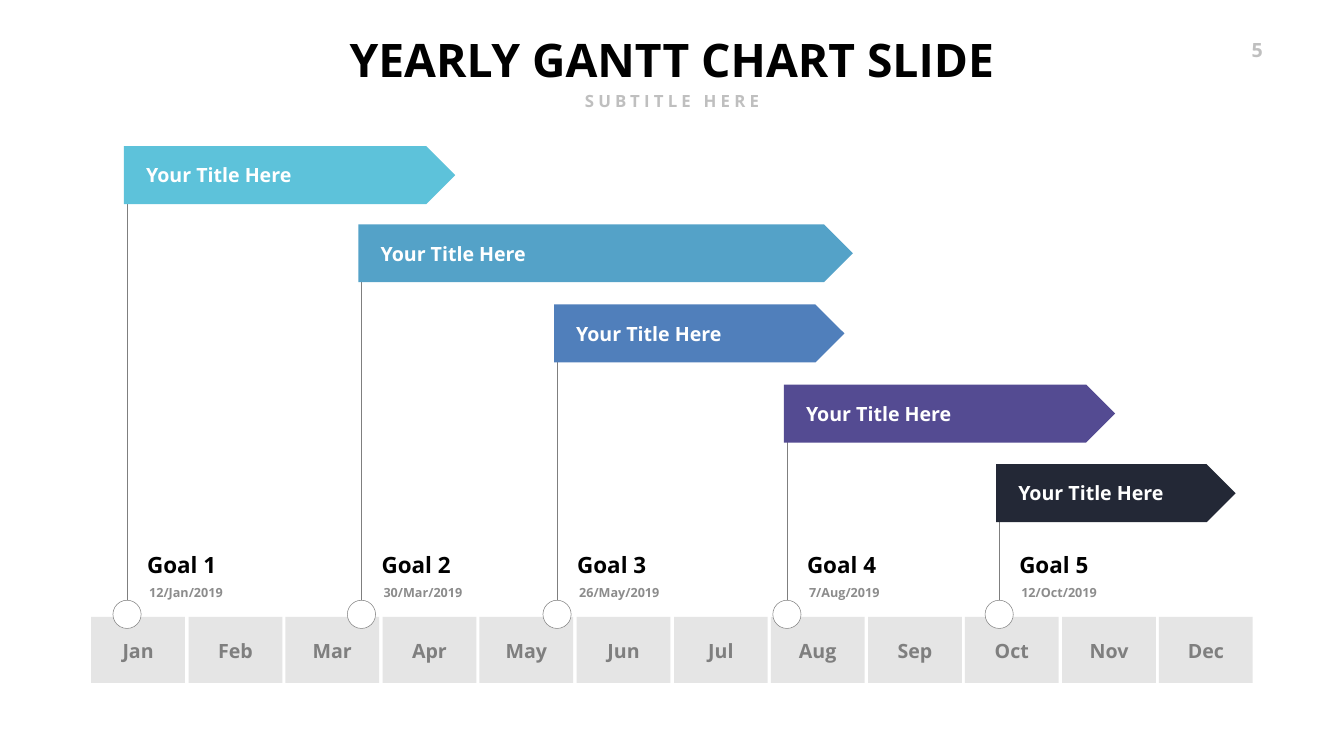
from lxml import etree
from pptx import Presentation
from pptx.dml.color import RGBColor
from pptx.enum.shapes import MSO_CONNECTOR, MSO_SHAPE
from pptx.enum.text import MSO_ANCHOR, PP_ALIGN
from pptx.oxml.ns import qn
from pptx.util import Pt

PX = 9144
FONT = "Open Sans"
RECT, OVAL, ARROW = MSO_SHAPE.RECTANGLE, MSO_SHAPE.OVAL, MSO_SHAPE.PENTAGON
STRAIGHT = MSO_CONNECTOR.STRAIGHT
LEFT, CENTER, RIGHT = PP_ALIGN.LEFT, PP_ALIGN.CENTER, PP_ALIGN.RIGHT
TOP, MIDDLE, BOTTOM = MSO_ANCHOR.TOP, MSO_ANCHOR.MIDDLE, MSO_ANCHOR.BOTTOM

BLACK = RGBColor(0x00, 0x00, 0x00)
WHITE = RGBColor(0xFF, 0xFF, 0xFF)
GRAY = RGBColor(0x7F, 0x7F, 0x7F)
DATE_GRAY = RGBColor(0x8C, 0x8C, 0x8C)
LIGHT_GRAY = RGBColor(0xBF, 0xBF, 0xBF)
SKY = RGBColor(0x5D, 0xC2, 0xDA)
AZURE = RGBColor(0x54, 0xA2, 0xC8)
BLUE = RGBColor(0x50, 0x7F, 0xBB)
PURPLE = RGBColor(0x54, 0x4B, 0x92)
NAVY = RGBColor(0x23, 0x28, 0x36)

MONTHS = ["Jan", "Feb", "Mar", "Apr", "May", "Jun",
          "Jul", "Aug", "Sep", "Oct", "Nov", "Dec"]
GOALS = [
    ("Goal 1", "12/Jan/2019", (246, 290, 657, 115), SKY),
    ("Goal 2", "30/Mar/2019", (711, 445, 981, 115), AZURE),
    ("Goal 3", "26/May/2019", (1099, 604, 576, 115), BLUE),
    ("Goal 4", "7/Aug/2019", (1555, 763, 657, 115), PURPLE),
    ("Goal 5", "12/Oct/2019", (1976, 921, 475, 115), NAVY),
]


def emu(*lengths):
    return [n * PX for n in lengths]


def add_text(s, box, text, size, color, align=LEFT, anchor=TOP, spacing=0):
    tf = s.shapes.add_textbox(*emu(*box)).text_frame
    tf.word_wrap = True
    tf.vertical_anchor = anchor
    p = tf.paragraphs[0]
    p.text = text
    p.alignment = align
    r = p.runs[0]
    r.font.name, r.font.size, r.font.bold = FONT, Pt(size), True
    r.font.color.rgb = color
    if spacing:
        r.font._element.set("spc", str(spacing * 100))


def add_box(s, kind, box, fill, line=None, alpha=None):
    sp = s.shapes.add_shape(kind, *emu(*box))
    sp.shadow.inherit = False
    sp.fill.solid()
    sp.fill.fore_color.rgb = fill
    if alpha:
        color = sp._element.spPr.find(qn("a:solidFill"))[0]
        etree.SubElement(color, qn("a:alpha")).set("val", str(alpha * 1000))
    if line:
        sp.line.color.rgb = line
        sp.line.width = Pt(0.75)
    else:
        sp.line.fill.background()


def add_header(s, box):
    x, y, w, h = box
    add_text(s, (x, y, w, 121), "YEARLY GANTT CHART SLIDE", 66, BLACK, CENTER)
    add_text(s, (x, y + 118, w, 50), "SUBTITLE HERE", 24, LIGHT_GRAY, CENTER, spacing=6)


def add_page_number(s, box):
    add_text(s, box, "5", 28, LIGHT_GRAY, RIGHT, spacing=3)


def add_month_axis(s, box):
    x, y, w, h = box
    gap = 7
    pitch = (w + gap) / len(MONTHS)
    cell_w = round(pitch) - gap
    for i, month in enumerate(MONTHS):
        left = x + round(i * pitch)
        add_box(s, RECT, (left, y, cell_w, h), GRAY, alpha=20)
        add_text(s, (left, y + 38, cell_w, 57), month, 28, GRAY, CENTER, BOTTOM)


def add_goal(s, box, axis_top, goal, date, color):
    x, y, w, h = box
    stem, label, dot = x + 6, x + 36, 56
    dot_top = axis_top - 33
    line = s.shapes.add_connector(STRAIGHT, *emu(stem, y + h // 2, stem, dot_top))
    line.line.color.rgb = GRAY
    line.line.width = Pt(0.75)
    etree.SubElement(line._element.spPr, qn("a:effectLst"))
    add_box(s, OVAL, (stem - dot // 2, dot_top, dot, dot), WHITE, GRAY)
    add_box(s, ARROW, box, color)
    add_text(s, (x + 34, y + 29, 312, 57), "Your Title Here", 28, WHITE, anchor=MIDDLE)
    add_text(s, (label, axis_top - 135, 164, 64), goal, 32, BLACK)
    add_text(s, (label + 4, axis_top - 68, 182, 40), date, 18, DATE_GRAY)


def main():
    prs = Presentation()
    prs.slide_width, prs.slide_height = emu(2666, 1500)
    s = prs.slides.add_slide(prs.slide_layouts[6])
    axis = (181, 1224, 2304, 131)
    add_page_number(s, (2428, 70, 87, 57))
    add_month_axis(s, axis)
    for goal, date, box, color in GOALS:
        add_goal(s, box, axis[1], goal, date, color)
    add_header(s, (661, 58, 1344, 168))
    prs.save("out.pptx")


if __name__ == "__main__":
    main()
